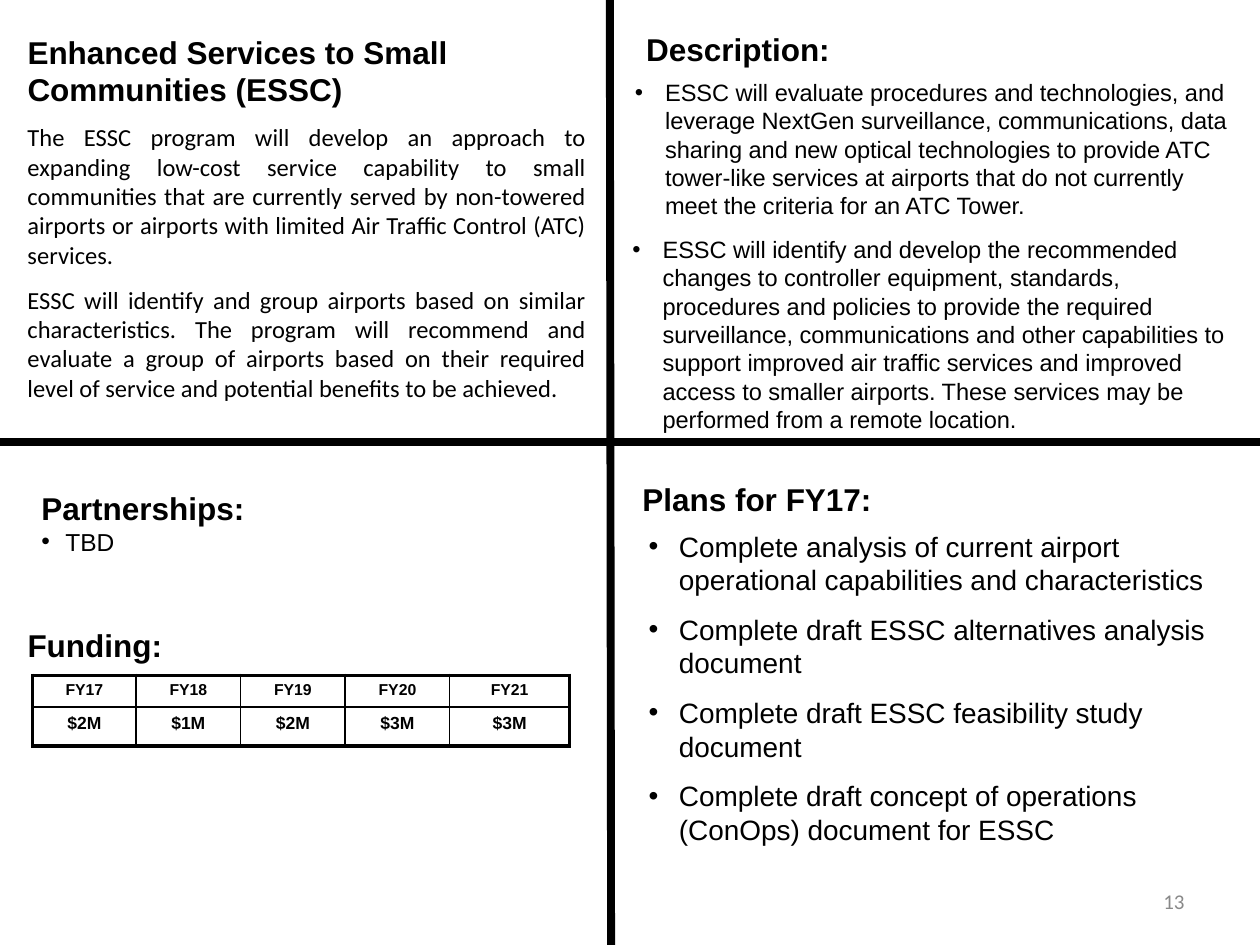
from lxml.etree import SubElement
from pptx import Presentation
from pptx.dml.color import RGBColor
from pptx.enum.shapes import MSO_CONNECTOR
from pptx.enum.text import MSO_ANCHOR, PP_ALIGN
from pptx.oxml.ns import qn
from pptx.util import Inches, Pt

BLACK, GREY = "000000", "898989"
HEADING = {"name": "Arial", "size": Pt(18), "bold": True}
SUMMARY = {"name": "Calibri", "size": Pt(14), "bold": False}
DETAIL = {"name": "Arial", "size": Pt(13.5), "bold": False}
PLAN = {"name": "Arial", "size": Pt(16), "bold": False}
PARTNER = {"name": "Arial", "size": Pt(14), "bold": False}
PAGE = {"name": "Calibri", "size": Pt(12), "bold": False}

SUMMARY_TEXTS = [
    "The ESSC program will develop an approach to expanding low-cost service "
    "capability to small communities that are currently served by non-towered "
    "airports or airports with limited Air Traffic Control (ATC) services.",
    "ESSC will identify and group airports based on similar characteristics. "
    "The program will recommend and evaluate a group of airports based on their "
    "required level of service and potential benefits to be achieved.",
]
DETAIL_TEXTS = [
    "ESSC will evaluate procedures and technologies, and leverage NextGen "
    "surveillance, communications, data sharing and new optical technologies to "
    "provide ATC tower-like services at airports that do not currently meet the "
    "criteria for an ATC Tower.",
    "ESSC will identify and develop the recommended changes to controller "
    "equipment, standards, procedures and policies to provide the required "
    "surveillance, communications and other capabilities to support improved air "
    "traffic services and improved access to smaller airports. These services "
    "may be performed from a remote location.",
]
PLAN_TEXTS = [
    "Complete analysis of current airport operational capabilities and characteristics",
    "Complete draft ESSC alternatives analysis document",
    "Complete draft ESSC feasibility study document",
    "Complete draft concept of operations (ConOps) document for ESSC",
]
FUNDING = [["FY17", "FY18", "FY19", "FY20", "FY21"],
           ["$2M", "$1M", "$2M", "$3M", "$3M"]]


def rgb(color):
    return RGBColor.from_string(color)


def set_format(target, values):
    for attribute, value in values.items():
        setattr(target, attribute, value)


def write(paragraph, text, font, color=BLACK, align=PP_ALIGN.LEFT):
    paragraph.alignment = align
    run = paragraph.add_run()
    run.text = text
    set_format(run.font, font)
    run.font.color.rgb = rgb(color)


def indent(paragraph, margin, hanging, bullet=True):
    properties = paragraph._p.get_or_add_pPr()
    properties.set("marL", str(Inches(margin)))
    properties.set("indent", str(-Inches(hanging)))
    if bullet:
        SubElement(properties, qn("a:buFont"), typeface="Arial")
        SubElement(properties, qn("a:buChar"), char="•")


def add_text_frame(slide, left, top, width, height):
    box = slide.shapes.add_textbox(Inches(left), Inches(top), Inches(width), Inches(height))
    box.text_frame.word_wrap = True
    return box.text_frame


def add_heading(slide, text, left, top, width, height=0.4):
    frame = add_text_frame(slide, left, top, width, height)
    write(frame.paragraphs[0], text, HEADING)
    return frame


def add_paragraphs(slide, box, texts, font, margins=None, align=PP_ALIGN.LEFT):
    """Write spaced paragraphs; margins makes them bulleted."""
    frame = add_text_frame(slide, *box)
    for index, text in enumerate(texts):
        paragraph = frame.paragraphs[0] if index == 0 else frame.add_paragraph()
        if margins:
            indent(paragraph, margins[index], 0.24)
        if index:
            paragraph.space_before = Pt(round(font["size"].pt * 0.2, 1))
        paragraph.space_after = Pt(6)
        write(paragraph, text, font, align=align)


def add_divider(slide, x1, y1, x2, y2):
    divider = slide.shapes.add_connector(
        MSO_CONNECTOR.STRAIGHT, Inches(x1), Inches(y1), Inches(x2), Inches(y2))
    divider.line.color.rgb = rgb(BLACK)
    divider.line.width = Pt(4.5)
    SubElement(divider._element.spPr, qn("a:effectLst"))


def add_border(cell, side, width):
    border = SubElement(cell._tc.get_or_add_tcPr(), qn("a:" + side), w=str(Pt(width)))
    fill = SubElement(border, qn("a:solidFill"))
    SubElement(fill, qn("a:srgbClr"), val=BLACK)


def add_funding_table(slide):
    widths, heights = [0.82, 0.83, 0.83, 0.83, 0.95], [0.24, 0.31]
    table = slide.shapes.add_table(
        len(heights), len(widths), Inches(0.26), Inches(5.36),
        Inches(sum(widths)), Inches(sum(heights))).table
    set_format(table, {"first_row": False, "horz_banding": False})
    for column, width in zip(table.columns, widths):
        column.width = Inches(width)
    for row, height in zip(table.rows, heights):
        row.height = Inches(height)
    last_row, last_column = len(heights) - 1, len(widths) - 1
    for r, values in enumerate(FUNDING):
        for c, value in enumerate(values):
            cell = table.cell(r, c)
            # Thick outer frame, thin inner grid
            outer = {"lnL": c == 0, "lnR": c == last_column,
                     "lnT": r == 0, "lnB": r == last_row}
            for side, is_outer in outer.items():
                add_border(cell, side, 2.25 if is_outer else 1)
            cell.fill.background()
            font = {"name": "Arial", "size": Pt(9 + r), "bold": True}
            write(cell.text_frame.paragraphs[0], value, font, align=PP_ALIGN.CENTER)


def main():
    presentation = Presentation()
    set_format(presentation, {"slide_width": Inches(10), "slide_height": Inches(7.5)})
    slide = presentation.slides.add_slide(presentation.slide_layouts[6])

    # Quadrant dividers
    add_divider(slide, 4.84, 0, 4.85, 7.5)
    add_divider(slide, 0, 3.51, 4.92, 3.51)
    add_divider(slide, 4.92, 3.51, 10, 3.51)

    # Program summary
    add_heading(slide, "Enhanced Services to Small Communities (ESSC)", 0.12, 0.21, 4.55, 0.71)
    add_paragraphs(slide, (0.12, 0.92, 4.63, 2.45), SUMMARY_TEXTS, SUMMARY,
                   align=PP_ALIGN.JUSTIFY)

    # Description
    add_heading(slide, "Description:", 5.03, 0.19, 4.87)
    add_paragraphs(slide, (4.92, 0.57, 4.92, 2.85), DETAIL_TEXTS, DETAIL, (0.26, 0.24))

    # Partnerships
    partnerships = add_heading(slide, "Partnerships:", 0.23, 3.83, 4.68, 0.64)
    partner = partnerships.add_paragraph()
    indent(partner, 0.19, 0.19)
    write(partner, "TBD", PARTNER)

    # Funding
    add_heading(slide, "Funding:", 0.12, 4.92, 4.12)
    add_funding_table(slide)

    # Plans
    add_heading(slide, "Plans for FY17:", 5, 3.76, 4.68)
    add_paragraphs(slide, (5.03, 4.15, 4.78, 2.76), PLAN_TEXTS, PLAN,
                   [0.26] * len(PLAN_TEXTS))

    # Page number
    page = add_text_frame(slide, 7.17, 6.95, 2.33, 0.4)
    page.vertical_anchor = MSO_ANCHOR.MIDDLE
    write(page.paragraphs[0], "13", PAGE, GREY, PP_ALIGN.RIGHT)

    presentation.save("out.pptx")


if __name__ == "__main__":
    main()
